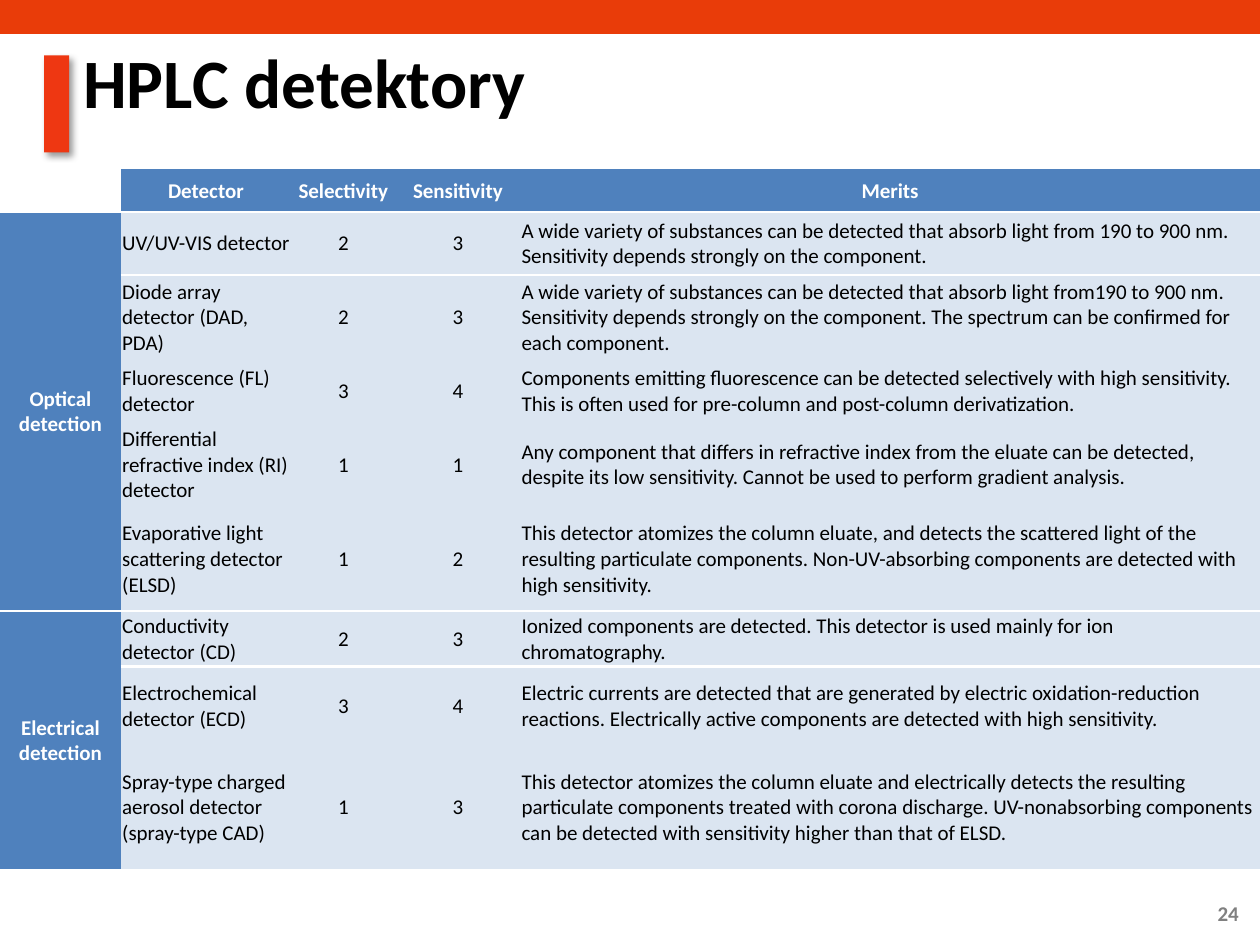
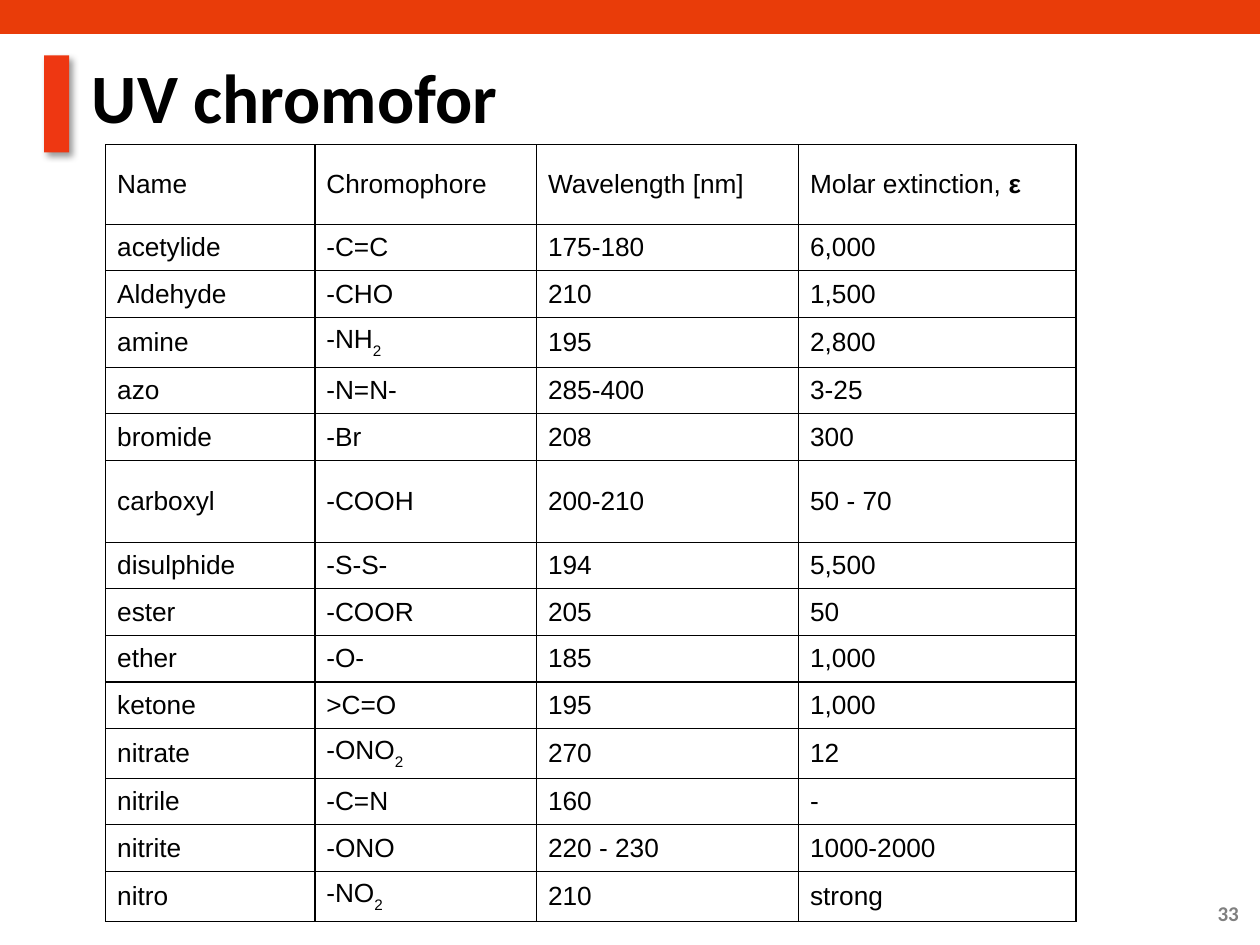
from lxml import etree
from pptx import Presentation
from pptx import util as u
from pptx.dml.color import RGBColor
from pptx.enum import shapes, text
from pptx.oxml import ns

BLACK = RGBColor(0x00, 0x00, 0x00)
WHITE = RGBColor(0xFF, 0xFF, 0xFF)
GRAY = RGBColor(0x80, 0x80, 0x80)
BAND = RGBColor(0xE9, 0x3C, 0x09)
MARKER = RGBColor(0xEE, 0x37, 0x12)
BLUE = RGBColor(0x4F, 0x81, 0xBD)
PALE = RGBColor(0xDB, 0xE5, 0xF1)
NO_GRID = "{2D5ABB26-0587-4C30-8999-92F81FD0307C}"
LEFT, CENTER, RIGHT = text.PP_ALIGN.LEFT, text.PP_ALIGN.CENTER, text.PP_ALIGN.RIGHT


def write(tf, content, size=12, font="Calibri", color=BLACK, bold=False, align=LEFT, spacing=None):
    tf.word_wrap = True
    p = tf.paragraphs[0]
    p.alignment = align
    p.line_spacing = spacing
    for part in [content] if isinstance(content, str) else content:
        chunk, style = (part, "") if isinstance(part, str) else part
        r = p.add_run()
        r.text = chunk
        r.font.name = font
        r.font.size = u.Pt(size)
        r.font.color.rgb = color
        r.font.bold = bold or style == "bold"
        if style == "sub":
            r.font._element.set("baseline", "-30000")


def add_grid(s, left, top, widths, heights, margins, borders):
    frame = s.shapes.add_table(
        len(heights), len(widths), u.Inches(left), u.Inches(top),
        u.Inches(sum(widths)), u.Inches(sum(heights)))
    table = frame.table
    table.first_row = table.horz_banding = False
    table._tbl.tblPr.find(ns.qn("a:tableStyleId")).text = NO_GRID
    for col, width in zip(table.columns, widths):
        col.width = u.Inches(width)
    for i, (row, height) in enumerate(zip(table.rows, heights)):
        row.height = u.Inches(height)
        sides, color, points = borders(i)
        for cell in row.cells:
            cell.vertical_anchor = text.MSO_ANCHOR.MIDDLE
            cell.margin_left, cell.margin_top, cell.margin_right, cell.margin_bottom = map(u.Inches, margins)
            tcPr = cell._tc.get_or_add_tcPr()
            for side in sides:
                ln = etree.SubElement(tcPr, ns.qn("a:ln" + side), w=str(u.Pt(points)))
                fill = etree.SubElement(ln, ns.qn("a:solidFill"))
                etree.SubElement(fill, ns.qn("a:srgbClr"), val=str(color))
            cell.fill.background()
    return table


prs = Presentation()
prs.slide_width, prs.slide_height = u.Inches(10), u.Inches(7.5)

slides = []
for title, left, top, number in [("HPLC detektory", 0.56, 0.33, "24"), ("UV chromofor", 0.63, 0.45, "33")]:
    s = prs.slides.add_slide(prs.slide_layouts[5])
    slides.append(s)
    for box, color in [((0, 0, 10, 0.27), BAND), ((0.35, 0.44, 0.2, 0.77), MARKER)]:
        sp = s.shapes.add_shape(shapes.MSO_SHAPE.RECTANGLE, *map(u.Inches, box))
        sp.shadow.inherit = False
        sp.fill.solid()
        sp.fill.fore_color.rgb = color
        sp.line.fill.background()
    effects = sp._element.spPr.find(ns.qn("a:effectLst"))
    shadow = etree.SubElement(
        effects, ns.qn("a:outerShdw"), blurRad=str(u.Pt(4)), dist=str(u.Pt(3)),
        dir="2700000", algn="tl", rotWithShape="0")
    shade = etree.SubElement(shadow, ns.qn("a:srgbClr"), val=str(BLACK))
    etree.SubElement(shade, ns.qn("a:alpha"), val="40000")

    sp = s.shapes.title
    sp.left, sp.top, sp.width, sp.height = map(u.Inches, (left, top, 9.1, 0.71))
    tf = sp.text_frame
    tf.auto_size = text.MSO_AUTO_SIZE.NONE
    tf.vertical_anchor = text.MSO_ANCHOR.MIDDLE
    write(tf, title, size=39.6, bold=True, spacing=0.9)

    tf = s.shapes.add_textbox(*map(u.Inches, (9.25, 7.05, 0.68, 0.4))).text_frame
    tf.vertical_anchor = text.MSO_ANCHOR.MIDDLE
    write(tf, number, color=GRAY, bold=True, align=RIGHT)

detectors = [
    ("", "Detector", "Selectivity", "Sensitivity", "Merits"),
    ("Optical detection", "UV/UV-VIS detector", "2", "3",
     "A wide variety of substances can be detected that absorb light from 190 to 900 nm. "
     "Sensitivity depends strongly on the component."),
    ("", "Diode array detector (DAD, PDA)", "2", "3",
     "A wide variety of substances can be detected that absorb light from190 to 900 nm. "
     "Sensitivity depends strongly on the component. The spectrum can be confirmed for each component."),
    ("", "Fluorescence (FL) detector", "3", "4",
     "Components emitting fluorescence can be detected selectively with high sensitivity. "
     "This is often used for pre-column and post-column derivatization."),
    ("", "Differential refractive index (RI) detector", "1", "1",
     "Any component that differs in refractive index from the eluate can be detected, "
     "despite its low sensitivity. Cannot be used to perform gradient analysis."),
    ("", "Evaporative light scattering detector (ELSD)", "1", "2",
     "This detector atomizes the column eluate, and detects the scattered light of the resulting "
     "particulate components. Non-UV-absorbing components are detected with high sensitivity."),
    ("Electrical detection", "Conductivity detector (CD)", "2", "3",
     "Ionized components are detected. This detector is used mainly for ion chromatography."),
    ("", "Electrochemical detector (ECD)", "3", "4",
     "Electric currents are detected that are generated by electric oxidation-reduction reactions. "
     "Electrically active components are detected with high sensitivity."),
    ("", "Spray-type charged aerosol detector (spray-type CAD)", "1", "3",
     "This detector atomizes the column eluate and electrically detects the resulting particulate "
     "components treated with corona discharge. UV-nonabsorbing components can be detected with "
     "sensitivity higher than that of ELSD."),
]
group_edges = {0: "B", 1: "T", 5: "B", 6: "T"}
table = add_grid(
    slides[0], 0, 1.34, [0.96, 1.35, 0.83, 0.99, 5.87],
    [0.34, 0.5, 0.67, 0.5, 0.67, 0.83, 0.44, 0.62, 0.99],
    (0.01, 0.01, 0.01, 0), lambda i: (group_edges.get(i, ""), WHITE, 1.5))
for first, last in [(1, 5), (6, 8)]:
    table.cell(first, 0).merge(table.cell(last, 0))
for i, row in enumerate(detectors):
    for j, value in enumerate(row):
        cell = table.cell(i, j)
        heading = i == 0 or j == 0
        if i or j:
            cell.fill.solid()
            cell.fill.fore_color.rgb = BLUE if heading else PALE
        if value:
            write(cell.text_frame, value, color=WHITE if heading else BLACK, bold=heading,
                  align=CENTER if heading or j in (2, 3) else LEFT)

chromophores = [
    ("Name", "Chromophore", "Wavelength [nm]", ["Molar extinction, ", ("ε", "bold")]),
    ("acetylide", "-C=C", "175-180", "6,000"),
    ("Aldehyde", "-CHO", "210", "1,500"),
    ("amine", ["-NH", ("2", "sub")], "195", "2,800"),
    ("azo", "-N=N-", "285-400", "3-25"),
    ("bromide", "-Br", "208", "300"),
    ("carboxyl", "-COOH", "200-210", "50 - 70"),
    ("disulphide", "-S-S-", "194", "5,500"),
    ("ester", "-COOR", "205", "50"),
    ("ether", "-O-", "185", "1,000"),
    ("ketone", ">C=O", "195", "1,000"),
    ("nitrate", ["-ONO", ("2", "sub")], "270", "12"),
    ("nitrile", "-C=N", "160", "-"),
    ("nitrite", "-ONO", "220 - 230", "1000-2000"),
    ("nitro", ["-NO", ("2", "sub")], "210", "strong"),
]
tall_rows = {0: 0.63, 6: 0.65}
table = add_grid(
    slides[1], 0.84, 1.15, [1.66, 1.76, 2.08, 2.2],
    [tall_rows.get(i, 0.37) for i in range(len(chromophores))],
    (0.09, 0.05, 0.09, 0.05), lambda i: ("LRTB", BLACK, 0.75))
for i, row in enumerate(chromophores):
    for j, value in enumerate(row):
        write(table.cell(i, j).text_frame, value, size=15, font="Arial")

prs.save("out.pptx")
